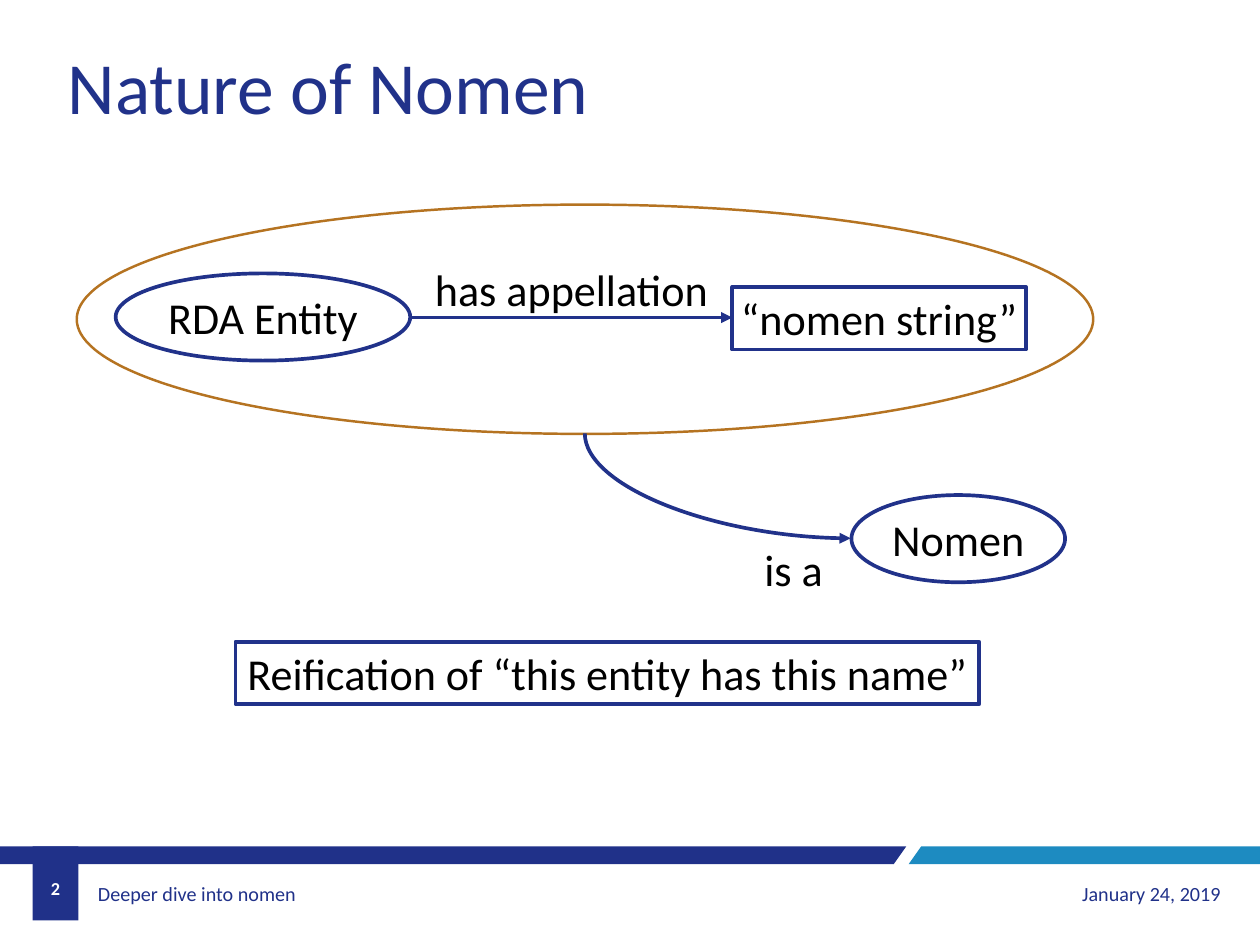
from pptx import Presentation
from pptx.dml.color import RGBColor
from pptx.enum.shapes import MSO_SHAPE as Kind, MSO_CONNECTOR as Link
from pptx.enum.text import PP_ALIGN as Align, MSO_ANCHOR as Anchor, MSO_AUTO_SIZE as Auto
from pptx.oxml.ns import qn
from pptx.util import Cm, Pt
from lxml.etree import SubElement

NAVY, INK, BLUE, GOLD = "203189", "21328A", "1D8BC1", "B57321"
WIDTH, HEIGHT = 36.27, 27.2
TOP, BASE = 24.36, 24.87  # footer band
ROW = 1.8  # height of one line of label text


def color(code):
    return RGBColor.from_string(code)


def write(shape, text, size=36, ink="000000", bold=False, align=Align.CENTER,
          anchor=Anchor.TOP, wrap=False, inset=(0.25, 0.13)):
    frame = shape.text_frame
    frame.word_wrap = wrap
    frame.auto_size = Auto.NONE if wrap else Auto.SHAPE_TO_FIT_TEXT
    frame.vertical_anchor = anchor
    frame.margin_left = frame.margin_right = Cm(inset[0])
    frame.margin_top = frame.margin_bottom = Cm(inset[1])
    para = frame.paragraphs[0]
    para.alignment = align
    run = para.add_run()
    run.text = text
    font = run.font
    font.name, font.size, font.bold = "Calibri", Pt(size), bold
    font.color.rgb = color(ink)


def label(slide, box, text, **style):
    write(slide.shapes.add_textbox(*map(Cm, box)), text, **style)


def paint(shape, fill):
    shape.shadow.inherit = False
    shape.fill.solid()
    shape.fill.fore_color.rgb = color(fill)
    shape.line.fill.background()


def band(slide, points, fill):
    spots = [(Cm(x), Cm(y)) for x, y in points]
    pen = slide.shapes.build_freeform(*spots[0], scale=1.0)
    pen.add_line_segments(spots[1:], close=True)
    paint(pen.convert_to_shape(), fill)


def node(slide, kind, box, text=None, line=INK, width=3):
    shape = slide.shapes.add_shape(kind, *map(Cm, box))
    shape.shadow.inherit = False
    shape.fill.background()
    shape.line.color.rgb = color(line)
    shape.line.width = Pt(width)
    if text:
        write(shape, text, anchor=Anchor.MIDDLE if kind == Kind.OVAL else Anchor.TOP)


def arrow(slide, start, end, bend=False):
    link = slide.shapes.add_connector(Link.CURVE, *map(Cm, start + end))
    link.line.color.rgb = color(INK)
    link.line.width = Pt(3)
    props = link._element.spPr
    SubElement(props.find(qn("a:ln")), qn("a:tailEnd"), type="triangle")
    SubElement(props, qn("a:effectLst"))
    if bend:  # quarter curve, turned by 270 degrees
        props.find(qn("a:prstGeom")).set("prst", "curvedConnector2")
        props.find(qn("a:xfrm")).set("rot", str(270 * 60000))


def footer(slide):
    band(slide, [(26.09, TOP), (0, TOP), (0, BASE), (25.73, BASE)], NAVY)
    band(slide, [(WIDTH, TOP), (26.52, TOP), (26.16, BASE), (WIDTH, BASE)], BLUE)
    tab = slide.shapes.add_shape(Kind.RECTANGLE, Cm(0.94), Cm(TOP), Cm(1.32), Cm(2.13))
    paint(tab, NAVY)
    style = dict(anchor=Anchor.MIDDLE, wrap=True)
    label(slide, (2.64, 25.02, 10.21, 1.4), "Deeper dive into nomen", size=16.4,
          ink=NAVY, align=Align.LEFT, inset=(0.18, 0.1), **style)
    label(slide, (26.09, 25.02, 9.3, 1.4), "January 24, 2019", size=16.4,
          ink=NAVY, align=Align.RIGHT, **style)
    label(slide, (0.94, BASE, 1.32, 1.4), "2", size=14.9, ink="FFFFFF",
          bold=True, **style)


def graph(slide):
    # Entity and its name
    node(slide, Kind.OVAL, (3.33, 7.87, 8.48, 2.51), "RDA Entity")
    node(slide, Kind.OVAL, (24.51, 14.25, 6.15, 2.51), "Nomen")
    label(slide, (12.22, 7.42, 8.46, ROW), "has appellation")
    arrow(slide, (11.79, 9.14), (21.08, 9.14))
    node(slide, Kind.OVAL, (2.21, 5.89, 29.26, 6.6), line=GOLD, width=2)
    node(slide, Kind.RECTANGLE, (21.08, 8.26, 8.46, ROW), "“nomen string”")
    # The whole statement is a nomen
    arrow(slide, (22.17, 10.16), (19.15, 17.81), bend=True)
    label(slide, (21.74, 15.49, 2.21, ROW), "is a")
    node(slide, Kind.RECTANGLE, (6.78, 18.47, 21.41, ROW),
         "Reification of “this entity has this name”")


def main():
    deck = Presentation()
    deck.slide_width, deck.slide_height = Cm(WIDTH), Cm(HEIGHT)
    slide = deck.slides.add_slide(deck.slide_layouts[6])
    footer(slide)
    label(slide, (1.7, 1.04, 15.8, 3.1), "Nature of Nomen", size=60, ink=INK,
          align=Align.LEFT, wrap=True)
    graph(slide)
    deck.save("out.pptx")


if __name__ == "__main__":
    main()
